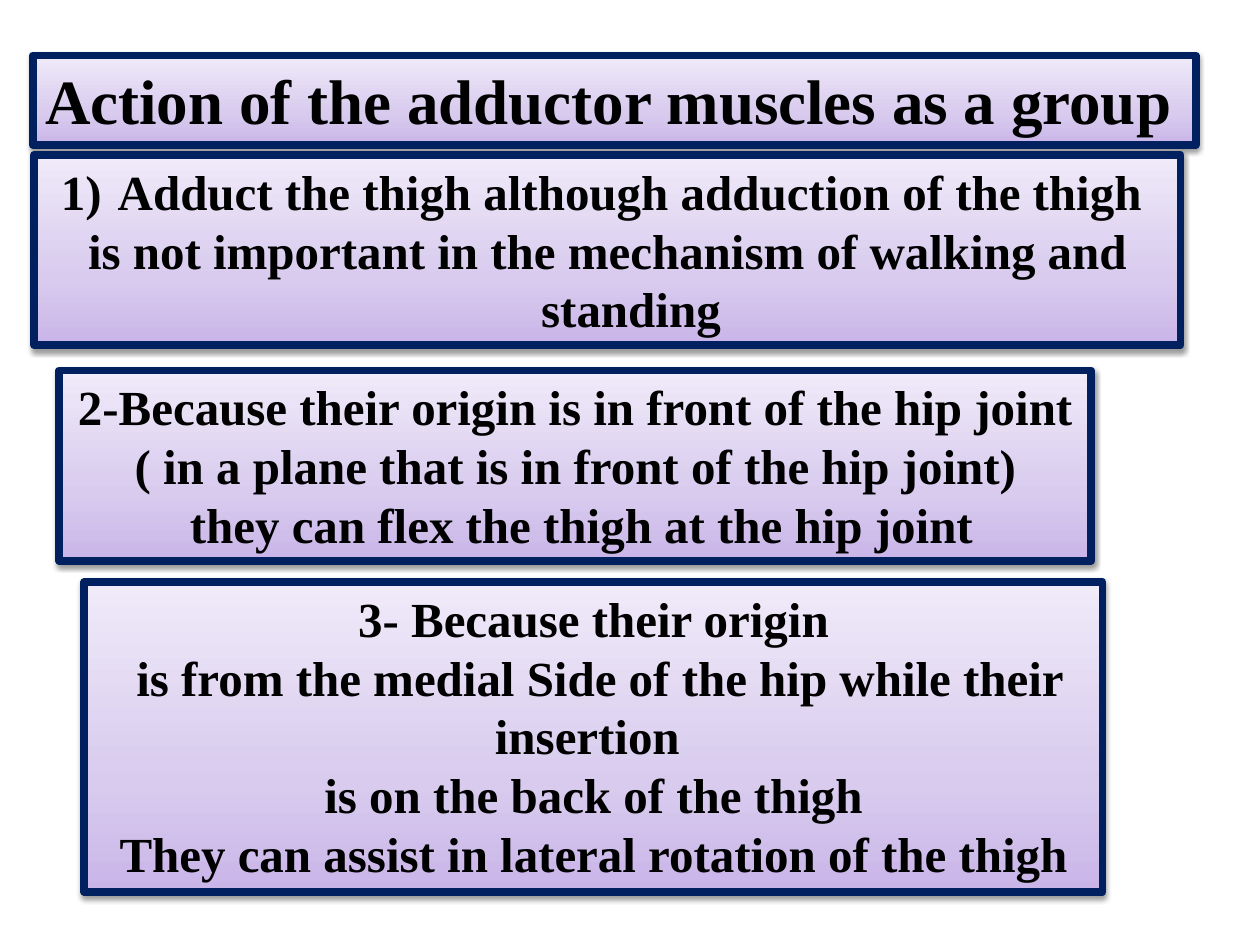
"""Build the slide on the action of the adductor muscles."""
from copy import deepcopy

from lxml import etree
from pptx import Presentation
from pptx.dml.color import RGBColor as RGB
from pptx.enum.shapes import MSO_SHAPE as Shape
from pptx.enum.text import MSO_ANCHOR as Anchor, MSO_AUTO_SIZE as Auto, PP_ALIGN as Align
from pptx.oxml import parse_xml
from pptx.oxml.ns import nsdecls, qn
from pptx.util import Pt

COLORS = {"text": "000000", "edge": "002060", "low": "C9B5E8", "mid": "D8CBEE", "high": "F0EAF9"}
STOPS = [(0, "low"), (0.35, "mid"), (1, "high")]
SHADOW = (
    f'<a:outerShdw {nsdecls("a")} blurRad="{Pt(3.1)}" dist="{Pt(1.6)}" dir="5400000" rotWithShape="0">'
    f'<a:srgbClr val="{COLORS["text"]}"><a:alpha val="38000"/></a:srgbClr></a:outerShdw>'
)

TITLE = ["Action of the adductor muscles as a group"]
ADDUCT = [
    " Adduct the thigh although adduction of the thigh ",
    "is not important in the mechanism of walking and standing",
]
FLEX = [
    "2-Because their origin is in front of the hip joint",
    "( in a plane that is in front of the hip joint)",
    " they can flex the thigh at the hip joint",
]
ROTATE = [
    "3- Because their origin",
    " is from the medial Side of the hip while their insertion ",
    "is on the back of the thigh",
    "They can assist in lateral rotation of the thigh",
]
BOXES = [
    ((18.72, 31.68, 664.56, 51.12), 36, Align.LEFT, False, TITLE),
    ((19.44, 88.56, 655.2, 108.72), 28, Align.CENTER, True, ADDUCT),
    ((33.84, 211.68, 589.68, 108.72), 28, Align.CENTER, False, FLEX),
    ((48.24, 332.64, 581.76, 177.12), 28, Align.CENTER, True, ROTATE),
]

deck = Presentation()
deck.slide_width, deck.slide_height = Pt(720), Pt(540)
slide = deck.slides.add_slide(deck.slide_layouts[6])

for place, size, align, wrap, lines in BOXES:
    box = slide.shapes.add_shape(Shape.RECTANGLE, *map(Pt, place))
    box.line.color.rgb = RGB.from_string(COLORS["edge"])
    box.line.width = Pt(4.5)

    box.fill.gradient()
    box.fill.gradient_angle = 90
    props = box._element.spPr
    stops = props.find(f'{qn("a:gradFill")}/{qn("a:gsLst")}')
    stops.insert(1, deepcopy(stops[0]))
    for stop, (spot, name) in zip(box.fill.gradient_stops, STOPS):
        stop.position = spot
        stop.color.rgb = RGB.from_string(COLORS[name])

    box.shadow.inherit = False
    props.find(qn("a:effectLst")).append(parse_xml(SHADOW))

    frame = box.text_frame
    frame.word_wrap = wrap
    frame.auto_size = Auto.SHAPE_TO_FIT_TEXT
    frame.vertical_anchor = Anchor.TOP
    frame.text = "\n".join(lines)
    for para in frame.paragraphs:
        para.alignment = align
        font = para.font
        font.name, font.size, font.bold = "Times New Roman", Pt(size), True
        font.color.rgb = RGB.from_string(COLORS["text"])
        if lines is ADDUCT:
            form = para._p.get_or_add_pPr()
            form.set("marL", str(Pt(27)))
            form.set("indent", str(Pt(-27)))
            if para.text == lines[0]:
                mark = etree.Element(qn("a:buAutoNum"), type="arabicParenR")
                form.insert(0, mark)

deck.save("out.pptx")
